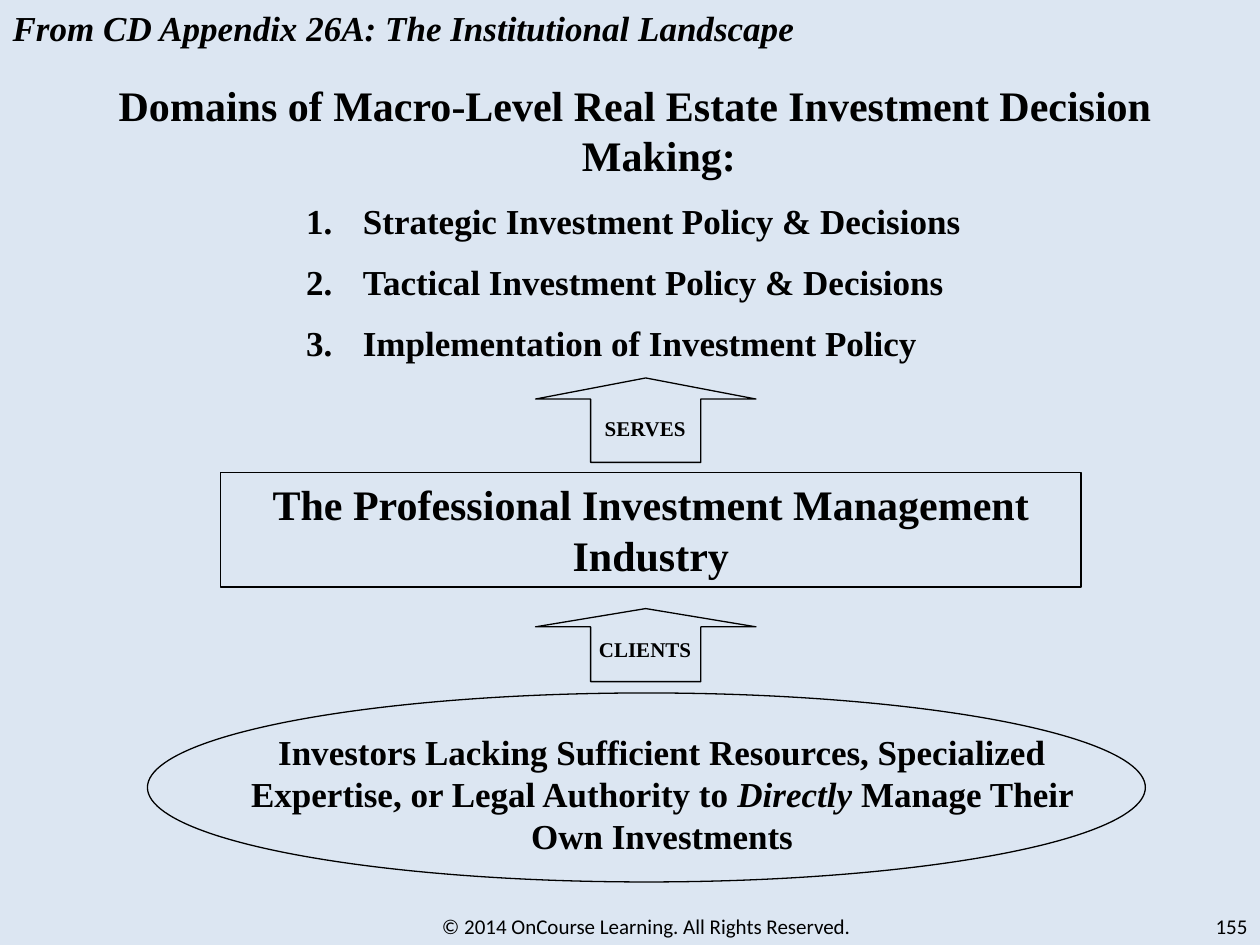
from dataclasses import dataclass
from typing import Any

from lxml import etree
from pptx import Presentation
from pptx.dml.color import RGBColor
from pptx.enum.shapes import MSO_SHAPE
from pptx.enum.text import MSO_ANCHOR, MSO_AUTO_SIZE, PP_ALIGN
from pptx.oxml.ns import qn
from pptx.util import Inches, Pt

LEFT, CENTER, RIGHT = PP_ALIGN.LEFT, PP_ALIGN.CENTER, PP_ALIGN.RIGHT
TOP, BOTTOM = MSO_ANCHOR.TOP, MSO_ANCHOR.BOTTOM
NO_AUTOSIZE = MSO_AUTO_SIZE.NONE
RECTANGLE, ELLIPSE, UP_ARROW = MSO_SHAPE.RECTANGLE, MSO_SHAPE.OVAL, MSO_SHAPE.UP_ARROW

COLORS = {"background": "DCE6F2", "ink": "000000"}
SERIF, SANS = "Times New Roman", "Calibri"
TITLE_AND_CONTENT = 1


def write_text(paragraph, text, size=20, font=SERIF, bold=True, italic=False,
               align=CENTER, space_before=0):
    """Append a formatted run to the paragraph."""
    paragraph.alignment = align
    paragraph.space_before = Pt(space_before)
    run = paragraph.add_run()
    run.text = text
    run.font.name = font
    run.font.size = Pt(size)
    run.font.bold = bold
    run.font.italic = italic
    run.font.color.rgb = RGBColor.from_string(COLORS["ink"])


def set_list_format(paragraph, margin, hanging, numbered):
    properties = paragraph._p.get_or_add_pPr()
    properties.set("marL", str(Inches(margin)))
    properties.set("indent", str(-Inches(hanging)))
    if numbered:
        etree.SubElement(properties, qn("a:buFont"), typeface="+mj-lt")
        etree.SubElement(properties, qn("a:buAutoNum"), type="arabicPeriod")
    else:
        etree.SubElement(properties, qn("a:buNone"))


@dataclass
class SlideBuilder:
    slide: Any
    line_width: float = 0.75

    def background(self):
        fill = self.slide.background.fill
        fill.solid()
        fill.fore_color.rgb = RGBColor.from_string(COLORS["background"])

    def frame(self, shape, anchor=TOP):
        """Prepare the text frame and return its first paragraph."""
        frame = shape.text_frame
        frame.word_wrap = True
        frame.auto_size = NO_AUTOSIZE
        frame.vertical_anchor = anchor
        return frame.paragraphs[0]

    def place(self, placeholder, box):
        placeholder.left, placeholder.top, placeholder.width, placeholder.height = map(Inches, box)
        return self.frame(placeholder)

    def title(self, box, text):
        paragraph = self.place(self.slide.shapes.title, box)
        write_text(paragraph, text, italic=True, align=LEFT)

    def numbered_list(self, box, heading, items):
        body = self.slide.placeholders[1]
        paragraph = self.place(body, box)
        set_list_format(paragraph, 0.38, 0.38, numbered=False)
        write_text(paragraph, heading, size=24)
        for item in items:
            paragraph = body.text_frame.add_paragraph()
            paragraph.level = 1
            set_list_format(paragraph, 1.95, 0.45, numbered=True)
            write_text(paragraph, item, align=LEFT, space_before=11)

    def text(self, box, *runs, anchor=TOP, **style):
        """Add a text box; each run is a (text, italic) pair."""
        paragraph = self.frame(self.slide.shapes.add_textbox(*map(Inches, box)), anchor)
        for text, italic in runs:
            write_text(paragraph, text, italic=italic, **style)

    def outline(self, kind, box):
        shape = self.slide.shapes.add_shape(kind, *map(Inches, box))
        shape.shadow.inherit = False
        shape.fill.background()
        shape.line.color.rgb = RGBColor.from_string(COLORS["ink"])
        shape.line.width = Pt(self.line_width)
        return shape

    def labelled_box(self, box, text):
        write_text(self.frame(self.outline(RECTANGLE, box)), text, size=24)

    def up_arrow(self, top, height, label, label_top):
        arrow = self.outline(UP_ARROW, (4.25, top, 1.75, height))
        arrow.adjustments[0] = 0.5
        arrow.adjustments[1] = 0.25
        self.text((4.58, label_top, 1.08, 0.3), (label, False), size=12)


def main():
    presentation = Presentation()
    presentation.slide_width, presentation.slide_height = Inches(10), Inches(7.5)
    layout = presentation.slide_layouts[TITLE_AND_CONTENT]
    builder = SlideBuilder(presentation.slides.add_slide(layout))

    builder.background()
    builder.title((0, 0, 7.42, 0.43), "From CD Appendix 26A: The Institutional Landscape")
    builder.numbered_list(
        (0.83, 0.58, 8.42, 2.42),
        "Domains of Macro-Level Real Estate Investment Decision Making:",
        ["Strategic Investment Policy & Decisions",
         "Tactical Investment Policy & Decisions",
         "Implementation of Investment Policy"])

    builder.outline(ELLIPSE, (1.17, 5.5, 7.92, 1.5))
    builder.text(
        (1.67, 5.75, 7.17, 1.1),
        ("Investors Lacking Sufficient Resources, Specialized Expertise, "
         "or Legal Authority to ", False),
        ("Directly", True),
        (" Manage Their Own Investments", False))
    builder.up_arrow(4.83, 0.58, "CLIENTS", label_top=5)
    builder.labelled_box((1.75, 3.75, 6.83, 0.91),
                         "The Professional Investment Management Industry")
    builder.up_arrow(3, 0.67, "SERVES", label_top=3.25)

    footer_style = {"size": 12, "font": SANS, "bold": False, "anchor": BOTTOM}
    builder.text((1.67, 6.98, 6.92, 0.52),
                 ("© 2014 OnCourse Learning. All Rights Reserved.", False), **footer_style)
    builder.text((8, 6.98, 2, 0.52), ("155", False), align=RIGHT, **footer_style)

    presentation.save("out.pptx")


if __name__ == "__main__":
    main()
